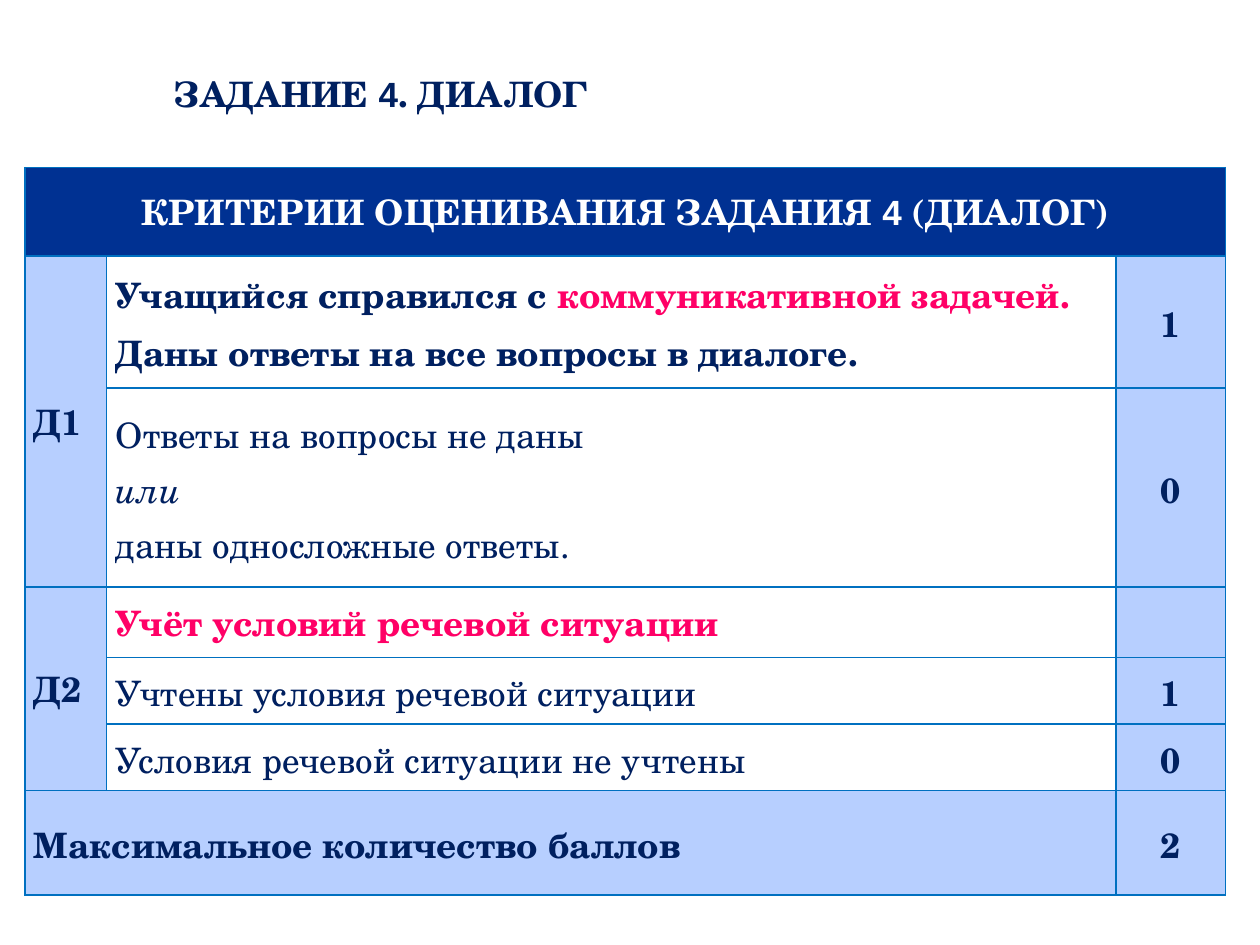
import pptx
import pptx.util
import pptx.dml.color
import pptx.enum.text
import pptx.oxml
import pptx.oxml.ns

Pt = pptx.util.Pt
ALIGN = pptx.enum.text.PP_ALIGN
MIDDLE = pptx.enum.text.MSO_ANCHOR.MIDDLE
COLORS = {"navy": "002060", "header": "003192", "pale": "B7CFFF",
          "white": "FFFFFF", "pink": "FF0066", "border": "0070C0"}
SERIF, SANS = "TeX Gyre Schola", "Arial"


def add_run(paragraph, text, color="navy", bold=True, italic=False, font=SERIF):
    run = paragraph.add_run()
    run.text = text
    run.font.name = font
    run.font.size = Pt(20)
    run.font.bold = bold
    run.font.italic = italic
    run.font.color.rgb = pptx.dml.color.RGBColor.from_string(COLORS[color])


def style_cell(cell, fill):
    cell.fill.solid()
    cell.fill.fore_color.rgb = pptx.dml.color.RGBColor.from_string(COLORS[fill])
    cell.vertical_anchor = MIDDLE
    cell.margin_left = cell.margin_right = Pt(5.2)
    cell.margin_top = cell.margin_bottom = 0
    properties = cell._tc.get_or_add_tcPr()
    for position, side in enumerate(("lnL", "lnR", "lnT", "lnB")):
        properties.insert(position, pptx.oxml.parse_xml(
            f'<a:{side} {pptx.oxml.ns.nsdecls("a")} w="{Pt(1)}"><a:solidFill>'
            f'<a:srgbClr val="{COLORS["border"]}"/></a:solidFill></a:{side}>'))


presentation = pptx.Presentation()
presentation.slide_width, presentation.slide_height = Pt(720), Pt(540)
slide = presentation.slides.add_slide(presentation.slide_layouts[5])

heading = slide.shapes.title
heading.left, heading.top, heading.width, heading.height = Pt(99.4), Pt(31.7), Pt(607), Pt(43.9)
heading_frame = heading.text_frame
heading_frame.word_wrap = True
heading_frame.auto_size = pptx.enum.text.MSO_AUTO_SIZE.NONE
heading_frame.vertical_anchor = MIDDLE
heading_frame.margin_left = heading_frame.margin_right = 0
heading_frame.margin_top = heading_frame.margin_bottom = 0
heading_line = heading_frame.paragraphs[0]
heading_line.alignment = ALIGN.LEFT
for text, font in (("ЗАДАНИЕ ", SERIF), ("4", SANS), (". ДИАЛОГ", SERIF)):
    add_run(heading_line, text, font=font)

column_widths = [46.8, 576.8, 62.6]
row_heights = [50.4, 75.6, 113.8, 40.3, 37.9, 37.9, 59.9]
criteria = slide.shapes.add_table(
    len(row_heights), len(column_widths), Pt(14.2), Pt(95.8),
    Pt(sum(column_widths)), Pt(sum(row_heights))).table
for column, width in zip(criteria.columns, column_widths):
    column.width = Pt(width)
for row, height in zip(criteria.rows, row_heights):
    row.height = Pt(height)

for r in range(len(row_heights)):
    for c in range(len(column_widths)):
        fill = "header" if r == 0 else "white" if c == 1 and r < 6 else "pale"
        style_cell(criteria.cell(r, c), fill)

for first, last in (((0, 0), (0, 2)), ((1, 0), (2, 0)), ((3, 0), (5, 0)), ((6, 0), (6, 1))):
    criteria.cell(*first).merge(criteria.cell(*last))

contents = [
    (0, 0, ALIGN.CENTER, 1, [[("КРИТЕРИИ ОЦЕНИВАНИЯ ЗАДАНИЯ ", "white"),
                              ("4", "white", True, False, SANS),
                              (" (ДИАЛОГ)", "white")]]),
    (1, 0, ALIGN.LEFT, 1, [[("Д1",)]]),
    (1, 1, ALIGN.JUSTIFY, 1.07, [[("Учащийся справился с ",), ("коммуникативной задачей.", "pink")],
                                 [("Даны ответы на все вопросы в диалоге.",)]]),
    (2, 1, ALIGN.JUSTIFY, 1.07, [[("Ответы на вопросы не даны", "navy", False)],
                                 [("или", "navy", False, True)],
                                 [("даны односложные ответы.", "navy", False)]]),
    (3, 0, ALIGN.LEFT, 1, [[("Д2",)]]),
    (3, 1, ALIGN.LEFT, 1, [[("Учёт условий речевой ситуации", "pink")]]),
    (4, 1, ALIGN.JUSTIFY, 1.07, [[("Учтены условия речевой ситуации", "navy", False)]]),
    (5, 1, ALIGN.JUSTIFY, 1.07, [[("Условия речевой ситуации не учтены", "navy", False)]]),
    (6, 0, ALIGN.JUSTIFY, 1.07, [[("Максимальное количество баллов",)]]),
]
for r, points in ((1, "1"), (2, "0"), (4, "1"), (5, "0"), (6, "2")):
    contents.append((r, 2, ALIGN.CENTER, 1.07, [[(points,)]]))

for r, c, alignment, spacing, lines in contents:
    frame = criteria.cell(r, c).text_frame
    for index, line in enumerate(lines):
        paragraph = frame.add_paragraph() if index else frame.paragraphs[0]
        paragraph.alignment = alignment
        paragraph.line_spacing = spacing
        for piece in line:
            add_run(paragraph, *piece)

presentation.save("out.pptx")
